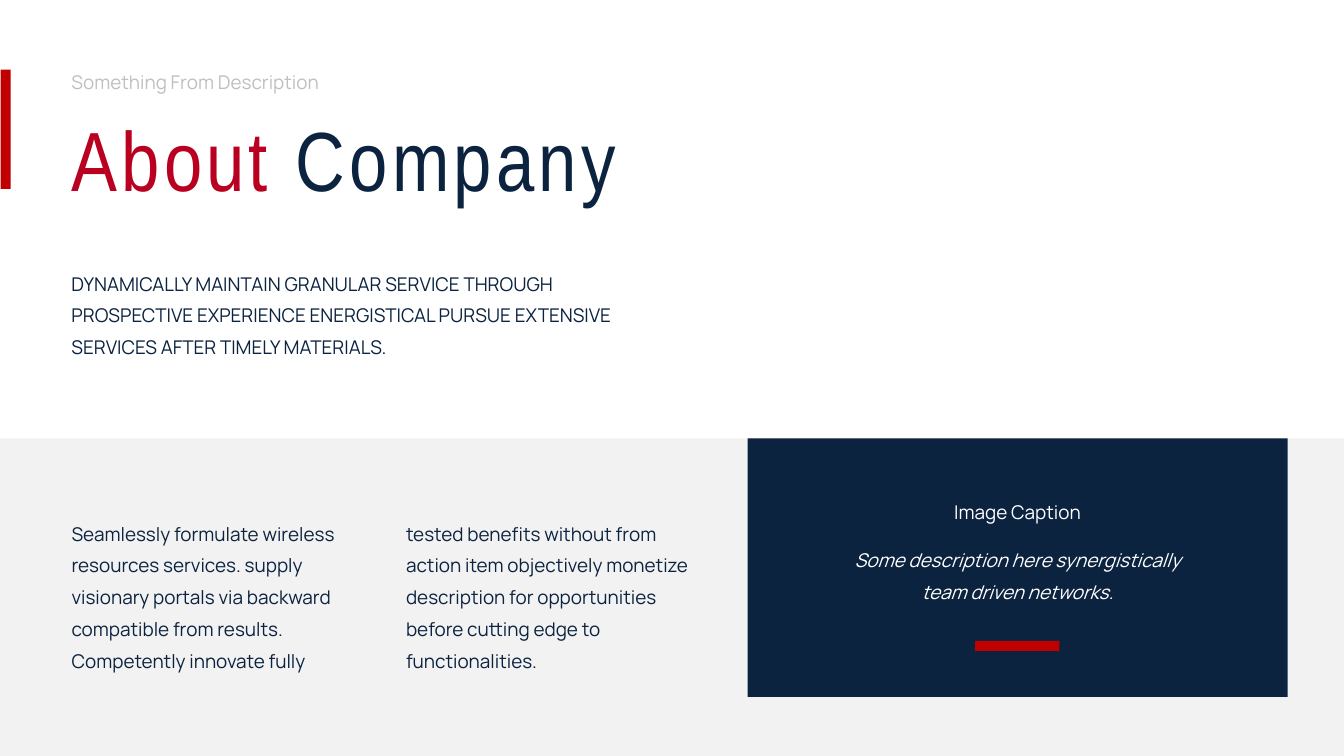
from pptx import Presentation
from pptx.dml.color import RGBColor
from pptx.enum.shapes import MSO_SHAPE
from pptx.enum.text import MSO_ANCHOR, MSO_AUTO_SIZE, PP_ALIGN
from pptx.oxml.xmlchemy import OxmlElement
from pptx.util import Inches, Pt

COLORS = {
    "band": "F2F2F2",
    "navy": "0C2340",
    "crimson": "BA0020",
    "red": "C00000",
    "gray": "BFBFBF",
    "white": "FFFFFF",
}
MARGIN = 4.95
BAND_TOP = 58


class SlideBuilder:
    title_font, title_size = "Arial Narrow", 120
    body_font, body_size = "Manrope", 27
    line_spacing = 1.4

    def __init__(self, presentation):
        self.width = presentation.slide_width
        self.height = presentation.slide_height
        self.slide = presentation.slides.add_slide(presentation.slide_layouts[1])

    def box(self, left, top, width, height):
        return (
            round(self.width * left / 100),
            round(self.height * top / 100),
            round(self.width * width / 100),
            round(self.height * height / 100),
        )

    def place(self, placeholder, area):
        placeholder.left, placeholder.top, placeholder.width, placeholder.height = self.box(*area)
        self.slide.shapes.element.append(placeholder.element)
        return placeholder.text_frame

    def set_frame(self, frame):
        frame.word_wrap = True
        frame.auto_size = MSO_AUTO_SIZE.SHAPE_TO_FIT_TEXT
        frame.vertical_anchor = MSO_ANCHOR.TOP

    def set_paragraph(self, paragraph, color, align=PP_ALIGN.LEFT, before=0):
        paragraph.alignment = align
        paragraph.line_spacing = self.line_spacing
        paragraph.space_before = Pt(before)
        paragraph.font.name = self.body_font
        paragraph.font.size = Pt(self.body_size)
        paragraph.font.color.rgb = RGBColor.from_string(COLORS[color])

    def rectangle(self, area, color):
        shape = self.slide.shapes.add_shape(MSO_SHAPE.RECTANGLE, *self.box(*area))
        shape.shadow.inherit = False
        shape.fill.solid()
        shape.fill.fore_color.rgb = RGBColor.from_string(COLORS[color])
        shape.line.fill.background()

    def title(self, area, words):
        frame = self.place(self.slide.shapes.title, area)
        self.set_frame(frame)
        paragraph = frame.paragraphs[0]
        paragraph.alignment = PP_ALIGN.LEFT
        paragraph.line_spacing = 0.8
        paragraph.font.name = self.title_font
        paragraph.font.size = Pt(self.title_size)
        for text, color in words:
            run = paragraph.add_run()
            run.text = text
            run.font.color.rgb = RGBColor.from_string(COLORS[color])
            run.font._element.set("spc", "600")

    def columns(self, area, text, color, count, gap):
        frame = self.place(self.slide.placeholders[1], area)
        self.set_frame(frame)
        frame._txBody.bodyPr.set("numCol", str(count))
        frame._txBody.bodyPr.set("spcCol", str(Inches(gap)))
        frame.text = text
        paragraph = frame.paragraphs[0]
        self.set_paragraph(paragraph, color)
        properties = paragraph._p.get_or_add_pPr()
        properties.set("marL", "0")
        properties.set("indent", "0")
        properties.insert_element_before(OxmlElement("a:buNone"), "a:tabLst", "a:defRPr", "a:extLst")

    def text(self, area, lines, color, align=PP_ALIGN.LEFT, before=0):
        frame = self.slide.shapes.add_textbox(*self.box(*area)).text_frame
        self.set_frame(frame)
        frame.text = "\n".join(lines)
        for paragraph in frame.paragraphs:
            self.set_paragraph(paragraph, color, align, before)
        return frame


def main():
    presentation = Presentation()
    presentation.slide_width = Inches(26.66)
    presentation.slide_height = Inches(15)
    builder = SlideBuilder(presentation)

    builder.rectangle((0, BAND_TOP, 100, 100 - BAND_TOP), "band")
    builder.title((MARGIN, 16.53, 41.56, 12.13), [("About", "crimson"), (" Company", "navy")])
    builder.rectangle((55.63, BAND_TOP, 40.17, 34.2), "navy")
    builder.text((MARGIN, 7.8, 33.46, 4.73), ["Something From Description"], "gray")
    builder.rectangle((0.04, 9.2, 0.75, 15.8), "red")
    builder.text(
        (MARGIN, 34.47, 45.69, 13.07),
        ["DYNAMICALLY MAINTAIN GRANULAR SERVICE THROUGH PROSPECTIVE EXPERIENCE "
         "ENERGISTICAL PURSUE EXTENSIVE SERVICES AFTER TIMELY MATERIALS."],
        "navy",
    )
    caption = builder.text(
        (62.04, 64.67, 27.34, 15.27),
        ["Image Caption", "Some description here synergistically team driven networks."],
        "white", PP_ALIGN.CENTER, before=24,
    )
    caption.paragraphs[1].font.italic = True
    builder.rectangle((72.56, 84.77, 6.26, 1.33), "red")
    builder.columns(
        (MARGIN, 67.53, 47.56, 21.87),
        "Seamlessly formulate wireless resources services. supply visionary portals via "
        "backward compatible from results. Competently innovate fully tested benefits "
        "without from action item objectively monetize description for opportunities "
        "before cutting edge to functionalities.",
        "navy", count=2, gap=0.79,
    )
    presentation.save("out.pptx")


if __name__ == "__main__":
    main()
